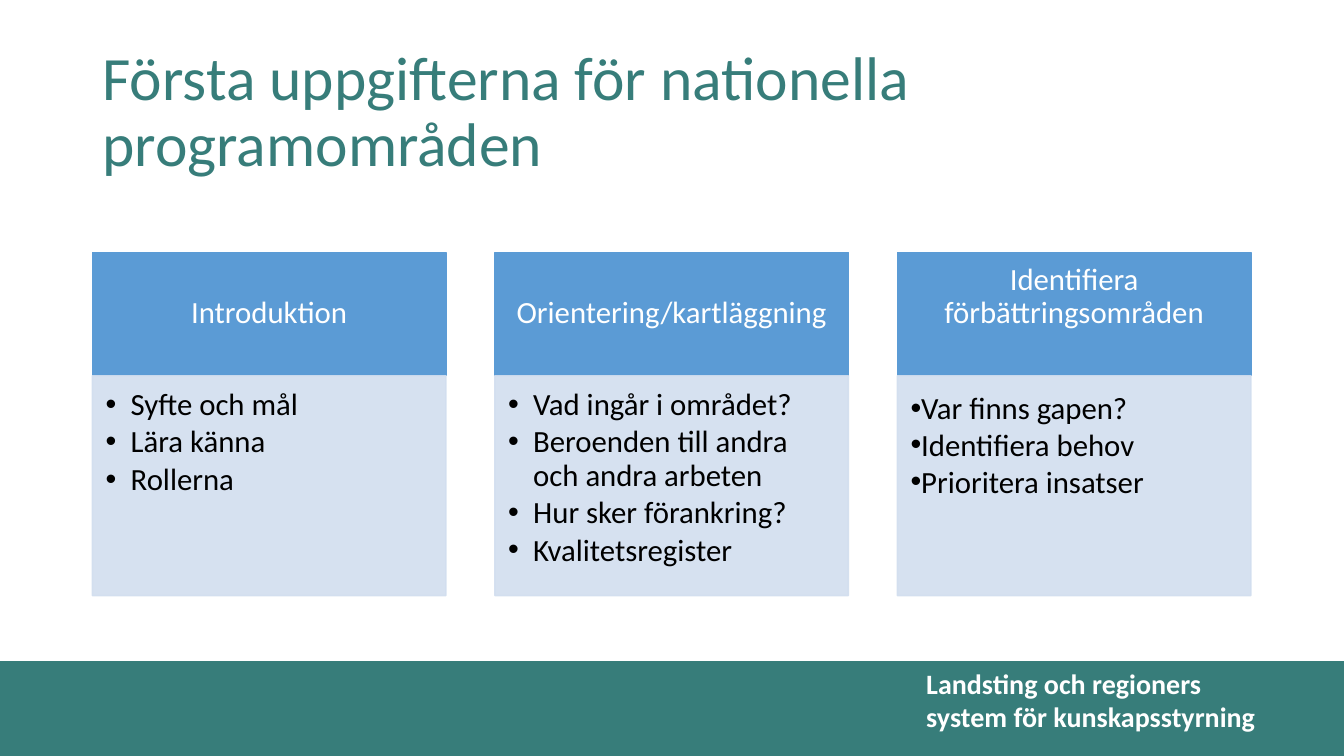
from lxml.etree import SubElement
from pptx import Presentation
from pptx.dml.color import RGBColor
from pptx.enum.shapes import MSO_SHAPE as Shape
from pptx.enum.text import MSO_ANCHOR as Anchor, MSO_AUTO_SIZE as AutoSize, PP_ALIGN as Align
from pptx.oxml.ns import qn
from pptx.util import Pt

TEAL, BLUE, PALE, WHITE, BLACK = "377D7A", "5B9BD5", "D2DEEF", "FFFFFF", "000000"
COLUMNS = [
    ("Introduktion", ["Syfte och mål", "Lära känna", "Rollerna"], 18),
    ("Orientering/kartläggning",
     ["Vad ingår i området?", "Beroenden till andra och andra arbeten",
      "Hur sker förankring?", "Kvalitetsregister"], 18),
    ("Identifiera förbättringsområden\v ",
     ["Var finns gapen?", "Identifiera behov", "Prioritera insatser"], 0),
]


def colour(hex_code):
    """Turn a hex string into a colour."""
    return RGBColor.from_string(hex_code)


def style(paragraph, size, hex_code, bold=False):
    """Set the font of a whole paragraph."""
    font = paragraph.font
    font.name, font.size, font.bold = "Calibri", Pt(size), bold
    font.color.rgb = colour(hex_code)


def add_panel(slide, left, top, width, height, fill, opacity=100):
    """Add a rectangle whose fill and outline share one colour."""
    panel = slide.shapes.add_shape(Shape.RECTANGLE, Pt(left), Pt(top), Pt(width), Pt(height))
    panel.shadow.inherit = False
    panel.fill.solid()
    panel.fill.fore_color.rgb = colour(fill)
    panel.line.color.rgb = colour(fill)
    panel.line.width = Pt(1)
    if opacity < 100:
        for tint in panel._element.spPr.iter(qn("a:srgbClr")):
            SubElement(tint, qn("a:alpha"), val=str(opacity * 1000))
    return panel


def set_frame(frame, anchor, left, top, right, bottom):
    """Set wrapping, anchor and insets of a text frame."""
    frame.word_wrap = True
    frame.vertical_anchor = anchor
    frame.margin_left, frame.margin_top = Pt(left), Pt(top)
    frame.margin_right, frame.margin_bottom = Pt(right), Pt(bottom)


def add_bullet(paragraph, indent):
    """Give a paragraph a round bullet with a hanging indent."""
    properties = paragraph._p.get_or_add_pPr()
    properties.set("marL", str(Pt(indent)))
    properties.set("indent", str(-Pt(indent)))
    SubElement(properties, qn("a:buFont"), typeface="Arial")
    SubElement(properties, qn("a:buChar"), char="•")


def add_title(slide, left, top, width, height):
    """Place and format the slide title."""
    title = slide.shapes.title
    title.left, title.top, title.width, title.height = map(Pt, (left, top, width, height))
    frame = title.text_frame
    frame.text = "Första uppgifterna för nationella programområden"
    frame.auto_size = AutoSize.NONE
    frame.vertical_anchor = Anchor.MIDDLE
    heading = frame.paragraphs[0]
    heading.alignment, heading.line_spacing = Align.LEFT, 0.9
    style(heading, 44, TEAL)


def add_column(slide, left, top, width, height, heading, points, indent):
    """Add a blue heading above a pale list of points."""
    header_height = 88.2
    header = add_panel(slide, left, top, width, header_height, BLUE).text_frame
    set_frame(header, Anchor.MIDDLE, 12.5, 7, 12.5, 7)
    header.text = heading
    label = header.paragraphs[0]
    label.alignment, label.line_spacing = Align.CENTER, 0.9
    style(label, 22, WHITE)

    body = add_panel(slide, left, top + header_height, width, height - header_height,
                     PALE, 90).text_frame
    set_frame(body, Anchor.TOP, 9.4, 9.4, 12.5, 14)
    body.text = "\n".join(points)
    for point in body.paragraphs:
        point.alignment = Align.LEFT
        if indent:
            point.line_spacing, point.space_after = 0.9, Pt(3)
        style(point, 22, BLACK)
        add_bullet(point, indent)


def add_footer(slide, left, top, width, height):
    """Add the teal band with the programme name."""
    band = add_panel(slide, left, top, width, height, TEAL)
    band.line.fill.background()
    programme = slide.shapes.add_textbox(Pt(left + 654.5), Pt(top), Pt(251), Pt(80)).text_frame
    programme.word_wrap = False
    programme.text = "Landsting och regioners\nsystem för kunskapsstyrning"
    for line in programme.paragraphs:
        style(line, 20, WHITE, bold=True)


def main():
    """Build and save the slide."""
    deck = Presentation()
    deck.slide_width, deck.slide_height = Pt(960), Pt(540)
    slide = deck.slides.add_slide(deck.slide_layouts[5])
    add_footer(slide, 0, 472.3, 960, 67.7)
    add_title(slide, 66, 28.8, 828, 104.4)
    for index, column in enumerate(COLUMNS):
        add_column(slide, 66 + index * 287.5, 180.2, 252.5, 245.3, *column)
    deck.save("out.pptx")


if __name__ == "__main__":
    main()
